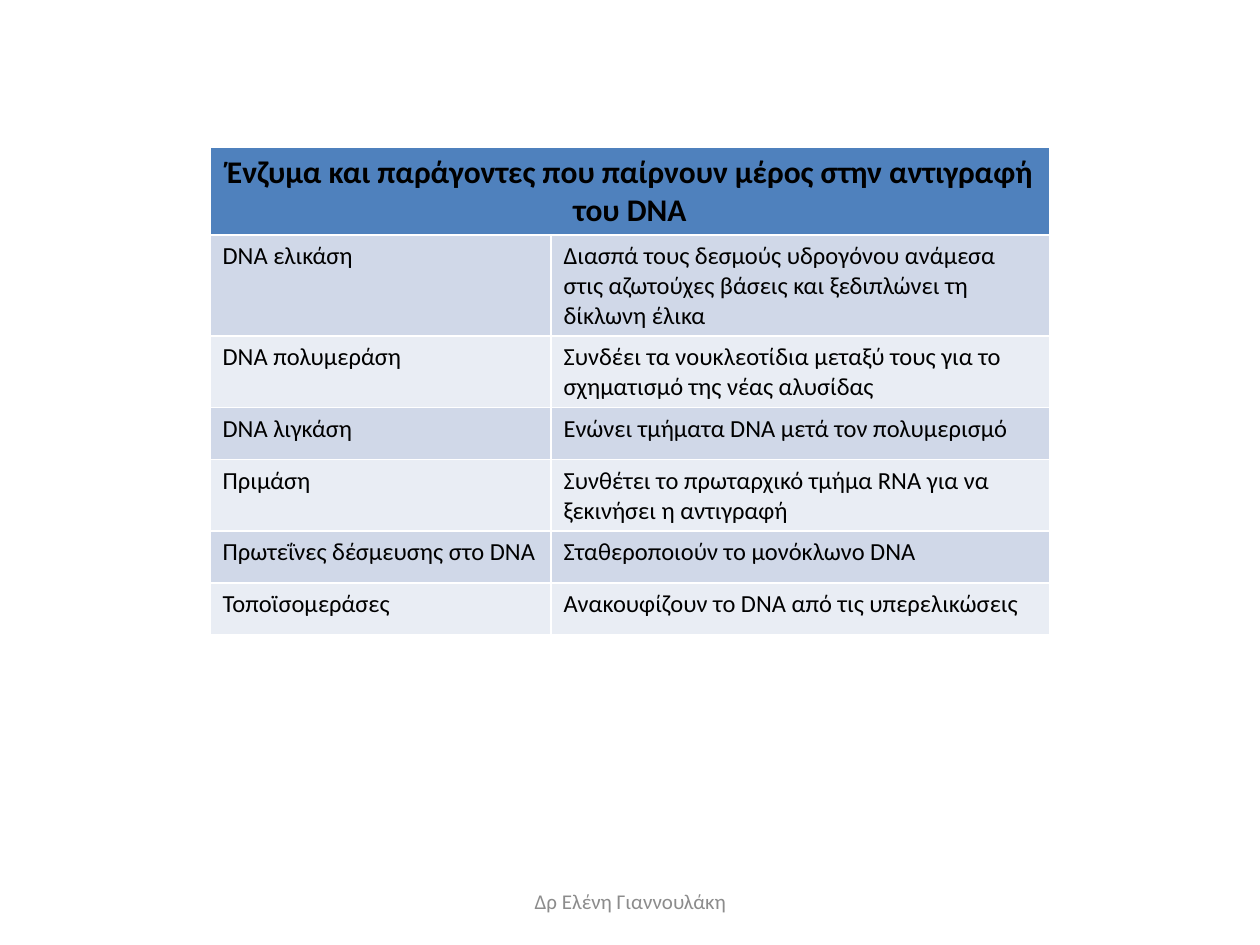
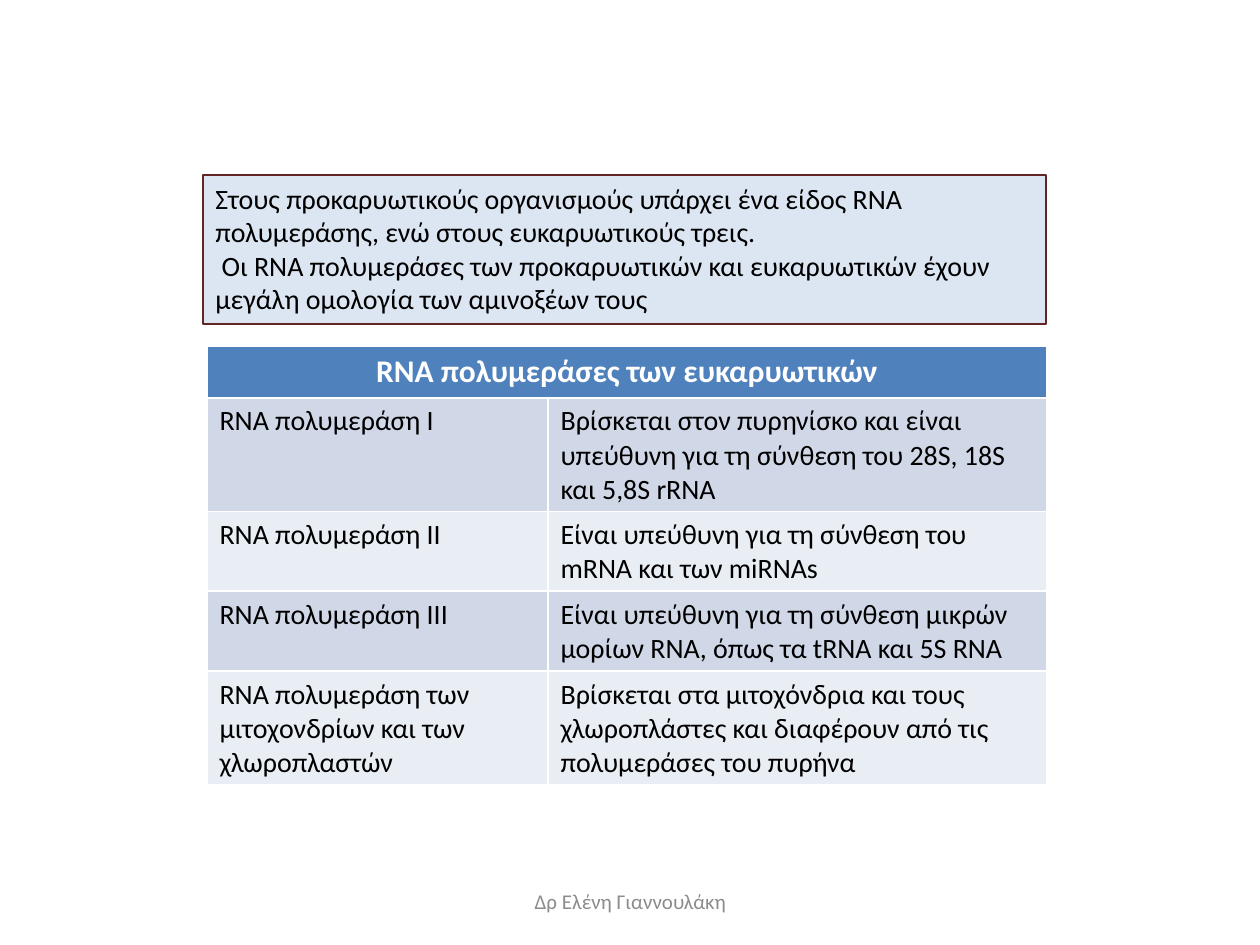
"""Build two slides on the enzymes of DNA replication and the RNA polymerases."""
from pptx import Presentation
from pptx.dml.color import RGBColor as Rgb
from pptx.enum.shapes import MSO_SHAPE as Shape
from pptx.enum.text import MSO_ANCHOR as Anchor, PP_ALIGN as Align
from pptx.util import Pt

SCALE = 914400 / 126
FONT = "Calibri"
HUES = {
    "head": "4F81BD",
    "odd": "D0D8E8",
    "even": "E9EDF4",
    "note": "DCE6F2",
    "edge": "632523",
    "foot": "8C8C8C",
    "black": "000000",
    "white": "FFFFFF",
}
COLS = (341, 499)
ROW = 52

ENZYMES = [
    ("DNA ελικάση", "Διασπά τους δεσμούς υδρογόνου ανάμεσα στις αζωτούχες βάσεις και ξεδιπλώνει τη δίκλωνη έλικα"),
    ("DNA πολυμεράση", "Συνδέει τα νουκλεοτίδια μεταξύ τους για το σχηματισμό της νέας αλυσίδας"),
    ("DNA λιγκάση", "Ενώνει τμήματα DNA μετά τον πολυμερισμό"),
    ("Πριμάση", "Συνθέτει το πρωταρχικό τμήμα RNA για να ξεκινήσει η αντιγραφή"),
    ("Πρωτεΐνες δέσμευσης στο DNA", "Σταθεροποιούν το μονόκλωνο DNA"),
    ("Τοποϊσομεράσες", "Ανακουφίζουν το DNA από τις υπερελικώσεις"),
]
POLYS = [
    ("RNA πολυμεράση Ι", "Βρίσκεται στον πυρηνίσκο και είναι υπεύθυνη για τη σύνθεση του 28S, 18S και 5,8S rRNA"),
    ("RNA πολυμεράση ΙΙ", "Είναι υπεύθυνη για τη σύνθεση του mRNA και των miRNAs"),
    ("RNA πολυμεράση ΙΙΙ", "Είναι υπεύθυνη για τη σύνθεση μικρών μορίων RNA, όπως τα tRNA και 5S RNA"),
    ("RNA πολυμεράση των μιτοχονδρίων και των χλωροπλαστών",
     "Βρίσκεται στα μιτοχόνδρια και τους χλωροπλάστες και διαφέρουν από τις πολυμεράσες του πυρήνα"),
]
NOTE = [
    "Στους προκαρυωτικούς οργανισμούς υπάρχει ένα είδος RNA πολυμεράσης, ενώ στους ευκαρυωτικούς τρεις.",
    " Οι RNA πολυμεράσες των προκαρυωτικών και ευκαρυωτικών έχουν μεγάλη ομολογία των αμινοξέων τους",
]


def emu(*sizes):
    """Turn px lengths into EMU."""
    return [round(size * SCALE) for size in sizes]


def hue(name):
    """Return a named colour."""
    return Rgb.from_string(HUES[name])


def paint(item, name):
    """Fill a shape or cell with a named colour."""
    item.fill.solid()
    item.fill.fore_color.rgb = hue(name)


def write(frame, *lines, size=16, color="black", bold=False, align=Align.LEFT):
    """Write each line as one paragraph in the given format."""
    frame.word_wrap = True
    for i, line in enumerate(lines):
        para = frame.add_paragraph() if i else frame.paragraphs[0]
        para.alignment = align
        run = para.add_run()
        run.text = line
        font = run.font
        font.name, font.size, font.bold = FONT, Pt(size), bold
        font.color.rgb = hue(color)


def footer(slide, box):
    """Add the author line."""
    frame = slide.shapes.add_textbox(*emu(*box)).text_frame
    frame.vertical_anchor = Anchor.MIDDLE
    write(frame, "Δρ Ελένη Γιαννουλάκη", size=12, color="foot", align=Align.CENTER)


def grid(slide, left, top, title, rows, size, color):
    """Add a table with a merged title row above striped rows."""
    count = len(rows) + 1
    box = emu(left, top, sum(COLS), ROW * count)
    table = slide.shapes.add_table(count, len(COLS), *box).table
    for col, width in zip(table.columns, emu(*COLS)):
        col.width = width
    head = table.cell(0, 0)
    head.merge(table.cell(0, len(COLS) - 1))
    paint(head, "head")
    write(head.text_frame, title, size=18, color=color, bold=True, align=Align.CENTER)
    for r, row in enumerate(rows, 1):
        for c, text in enumerate(row):
            cell = table.cell(r, c)
            paint(cell, "odd" if r % 2 else "even")
            write(cell.text_frame, text, size=size)


def note(slide, box):
    """Add the framed note."""
    rect = slide.shapes.add_shape(Shape.RECTANGLE, *emu(*box))
    rect.shadow.inherit = False
    paint(rect, "note")
    rect.line.color.rgb = hue("edge")
    rect.line.width = Pt(0.75)
    rect.text_frame.vertical_anchor = Anchor.TOP
    write(rect.text_frame, *NOTE)


def page(deck):
    """Add a blank slide with its footer."""
    slide = deck.slides.add_slide(deck.slide_layouts[6])
    footer(slide, (431, 876, 399, 50))
    return slide


def main():
    """Build and save the deck."""
    deck = Presentation()
    deck.slide_width, deck.slide_height = emu(1260, 945)
    grid(page(deck), 210, 147, "Ένζυμα και παράγοντες που παίρνουν μέρος στην αντιγραφή του DNA",
         ENZYMES, 14, "black")
    slide = page(deck)
    grid(slide, 207, 346, "RNA πολυμεράσες των ευκαρυωτικών", POLYS, 16, "white")
    note(slide, (203, 175, 843, 149))
    deck.save("out.pptx")


if __name__ == "__main__":
    main()
